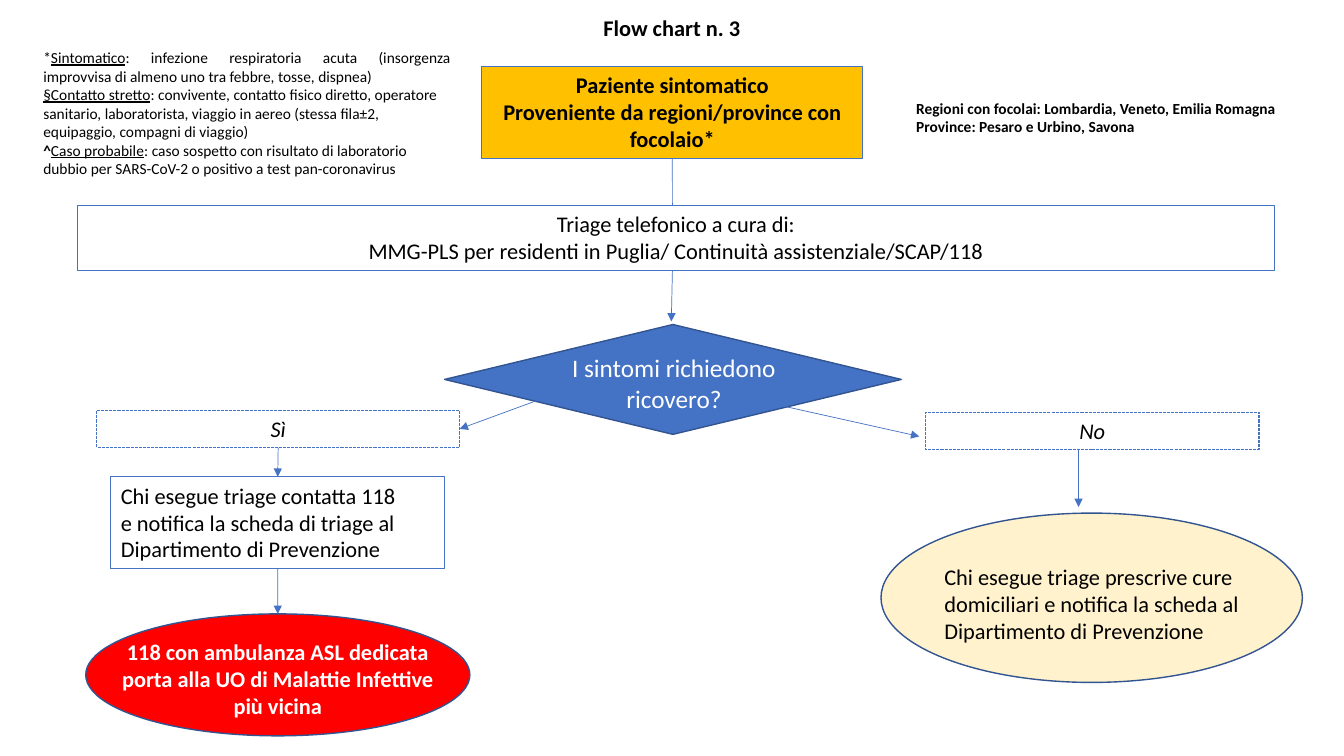
from dataclasses import dataclass
from typing import NamedTuple, Optional, Union

from lxml.etree import SubElement
from pptx import Presentation
from pptx.dml.color import RGBColor
from pptx.enum.dml import MSO_LINE
from pptx.enum.shapes import MSO_CONNECTOR, MSO_SHAPE as Preset
from pptx.enum.text import MSO_ANCHOR, PP_ALIGN as Align
from pptx.oxml.ns import qn
from pptx.util import Inches, Pt

SLIDE_WIDTH, SLIDE_HEIGHT = Inches(13.33), Inches(7.5)
BLUE, DARK_BLUE = "4472C4", "325491"
BLACK, WHITE = "000000", "FFFFFF"
TOP, LEFT, BOTTOM, RIGHT = range(4)


class Area(NamedTuple):
    """Percentages of the slide's width and height."""
    left: float
    top: float
    width: float
    height: float


class Point(NamedTuple):
    x: float
    y: float


class Joint(NamedTuple):
    step: str
    side: int


class Phrase(NamedTuple):
    text: str
    underline: bool = False
    bold: bool = False


class Paragraph(NamedTuple):
    phrases: tuple
    align: Align = Align.LEFT


@dataclass(frozen=True)
class Wording:
    paragraphs: tuple
    size: int = 16
    color: str = BLACK
    bold: bool = False
    italic: bool = False
    indent: float = 0


@dataclass(frozen=True)
class Step:
    name: str
    area: Area
    wording: Optional[Wording] = None
    preset: Optional[Preset] = None
    fill: Optional[str] = None
    line: str = BLUE
    weight: float = 0.75
    dashed: bool = False


@dataclass(frozen=True)
class Flow:
    start: Union[Point, Joint]
    end: Union[Point, Joint]
    arrow: bool = True


def lines(*texts: str, align: Align = Align.CENTER) -> tuple:
    return tuple(Paragraph((Phrase(text),), align) for text in texts)


def definition(term: str, meaning: str, mark: str = "", bold: bool = False,
               align: Align = Align.LEFT) -> Paragraph:
    opening = (Phrase(mark, bold=bold),) if mark else ()
    return Paragraph(opening + (Phrase(term, underline=True), Phrase(meaning)), align)


def rgb(color: str) -> RGBColor:
    return RGBColor.from_string(color)


def across(share: float) -> int:
    return round(SLIDE_WIDTH * share / 100)


def down(share: float) -> int:
    return round(SLIDE_HEIGHT * share / 100)


def place(area: Area) -> tuple:
    return across(area.left), down(area.top), across(area.width), down(area.height)


def write(frame, wording: Wording) -> None:
    frame.word_wrap = True
    frame.vertical_anchor = MSO_ANCHOR.TOP
    for index, content in enumerate(wording.paragraphs):
        paragraph = frame.add_paragraph() if index else frame.paragraphs[0]
        paragraph.alignment = content.align
        paragraph.line_spacing = 1.0
        font = paragraph.font
        font.name, font.size = "Calibri", Pt(wording.size)
        font.bold, font.italic = wording.bold, wording.italic
        font.color.rgb = rgb(wording.color)
        if wording.indent:
            paragraph._p.get_or_add_pPr().set("marL", str(across(wording.indent)))
        for phrase in content.phrases:
            run = paragraph.add_run()
            run.text = phrase.text
            if phrase.underline:
                run.font.underline = True
            if phrase.bold:
                run.font.bold = True


def draw_step(slide, step: Step):
    if step.preset is None:
        shape = slide.shapes.add_textbox(*place(step.area))
    else:
        shape = slide.shapes.add_shape(step.preset, *place(step.area))
        shape.shadow.inherit = False
        if step.fill:
            shape.fill.solid()
            shape.fill.fore_color.rgb = rgb(step.fill)
        else:
            shape.fill.background()
        shape.line.color.rgb = rgb(step.line)
        shape.line.width = Pt(step.weight)
        if step.dashed:
            shape.line.dash_style = MSO_LINE.SQUARE_DOT
    if step.wording:
        write(shape.text_frame, step.wording)
    return shape


def draw_flow(slide, flow: Flow, drawn: dict) -> None:
    ends = [(across(end.x), down(end.y)) if isinstance(end, Point) else (0, 0)
            for end in (flow.start, flow.end)]
    connector = slide.shapes.add_connector(MSO_CONNECTOR.STRAIGHT, *ends[0], *ends[1])
    if isinstance(flow.start, Joint):
        connector.begin_connect(drawn[flow.start.step], flow.start.side)
    if isinstance(flow.end, Joint):
        connector.end_connect(drawn[flow.end.step], flow.end.side)
    connector.line.color.rgb = rgb(BLUE)
    connector.line.width = Pt(0.5)
    if flow.arrow:
        SubElement(connector.line._get_or_add_ln(), qn("a:tailEnd"), type="triangle")
    SubElement(connector._element.spPr, qn("a:effectLst"))


TITLE_AREA = Area(8.85, 1.2, 82.28, 8.53)
TITLE = Wording(lines("Flow chart n. 3"), bold=True)

STEPS = (
    Step("home care", Area(65.55, 67.87, 31.35, 22.4), None, Preset.OVAL, "FFF2CC", DARK_BLUE, 1),
    Step("patient", Area(35.85, 8.8, 28.35, 12.13),
         Wording(lines("Paziente sintomatico",
                       "Proveniente da regioni/province con focolaio*"), bold=True),
         Preset.RECTANGLE, "FFC000"),
    Step("triage", Area(5.78, 27.2, 89.03, 8.53),
         Wording(lines("Triage telefonico a cura di:",
                       "MMG-PLS per residenti in Puglia/ Continuità assistenziale/SCAP/118")),
         Preset.RECTANGLE),
    Step("yes", Area(7.2, 54.27, 27, 4.93), Wording(lines("Sì"), italic=True),
         Preset.RECTANGLE, dashed=True),
    Step("decision", Area(33.08, 42.93, 33.98, 14.53), None, Preset.DIAMOND, BLUE, DARK_BLUE, 1),
    Step("question", Area(40.73, 46, 18.83, 9.47),
         Wording(lines("I sintomi richiedono ricovero?"), size=18, color=WHITE)),
    Step("ambulance", Area(6.38, 81.2, 28.58, 16.13), None, Preset.OVAL, "FF0000", DARK_BLUE, 1),
    Step("transport", Area(8.25, 83.73, 24.83, 12.13),
         Wording(lines("118 con ambulanza ASL dedicata porta alla UO di Malattie Infettive più vicina"),
                 color=WHITE, bold=True)),
    Step("definitions", Area(2.48, 5.73, 31.8, 23.6), Wording((
        definition("Sintomatico", ": infezione respiratoria acuta (insorgenza improvvisa di almeno "
                   "uno tra febbre, tosse, dispnea)", "*", align=Align.JUSTIFY),
        definition("§Contatto stretto", ": convivente, contatto fisico diretto, operatore sanitario, "
                   "laboratorista, viaggio in aereo (stessa fila±2, equipaggio, compagni di viaggio)"),
        definition("Caso probabile", ": caso sospetto con risultato di laboratorio dubbio per "
                   "SARS-CoV-2 o positivo a test pan-coronavirus", "^", bold=True)), size=11)),
    Step("outbreaks", Area(67.43, 12.4, 30.15, 6.27),
         Wording(lines("Regioni con focolai: Lombardia, Veneto, Emilia Romagna",
                       "Province: Pesaro e Urbino, Savona", align=Align.LEFT), size=11, bold=True)),
    Step("no", Area(68.85, 54.53, 24.83, 4.93), Wording(lines("No"), italic=True),
         Preset.RECTANGLE, dashed=True),
    Step("prescription", Area(68.85, 73.87, 29.4, 12.13),
         Wording(lines("Chi esegue triage prescrive cure domiciliari e notifica la scheda al "
                       "Dipartimento di Prevenzione", align=Align.LEFT), indent=0.68)),
    Step("contact", Area(8.25, 63.07, 24.83, 12.13),
         Wording(lines("Chi esegue triage contatta 118", "e notifica la scheda di triage al "
                       "Dipartimento di Prevenzione", align=Align.LEFT)), Preset.RECTANGLE),
)

FLOWS = (
    Flow(Joint("patient", BOTTOM), Point(50.03, 27.2), arrow=False),
    Flow(Point(50.03, 35.87), Point(49.95, 42.53)),
    Flow(Point(40.43, 52.67), Joint("yes", RIGHT)),
    Flow(Point(57.3, 53.33), Point(68.4, 57.73)),
    Flow(Point(80.25, 59.33), Point(80.25, 67.07)),
    Flow(Joint("yes", BOTTOM), Joint("contact", TOP)),
    Flow(Joint("contact", BOTTOM), Joint("ambulance", TOP)),
)


def main() -> None:
    deck = Presentation()
    deck.slide_width, deck.slide_height = SLIDE_WIDTH, SLIDE_HEIGHT
    slide = deck.slides.add_slide(deck.slide_layouts[5])
    title = slide.shapes.title
    title.left, title.top, title.width, title.height = place(TITLE_AREA)
    write(title.text_frame, TITLE)
    drawn = {step.name: draw_step(slide, step) for step in STEPS}
    for flow in FLOWS:
        draw_flow(slide, flow, drawn)
    deck.save("out.pptx")


if __name__ == "__main__":
    main()
